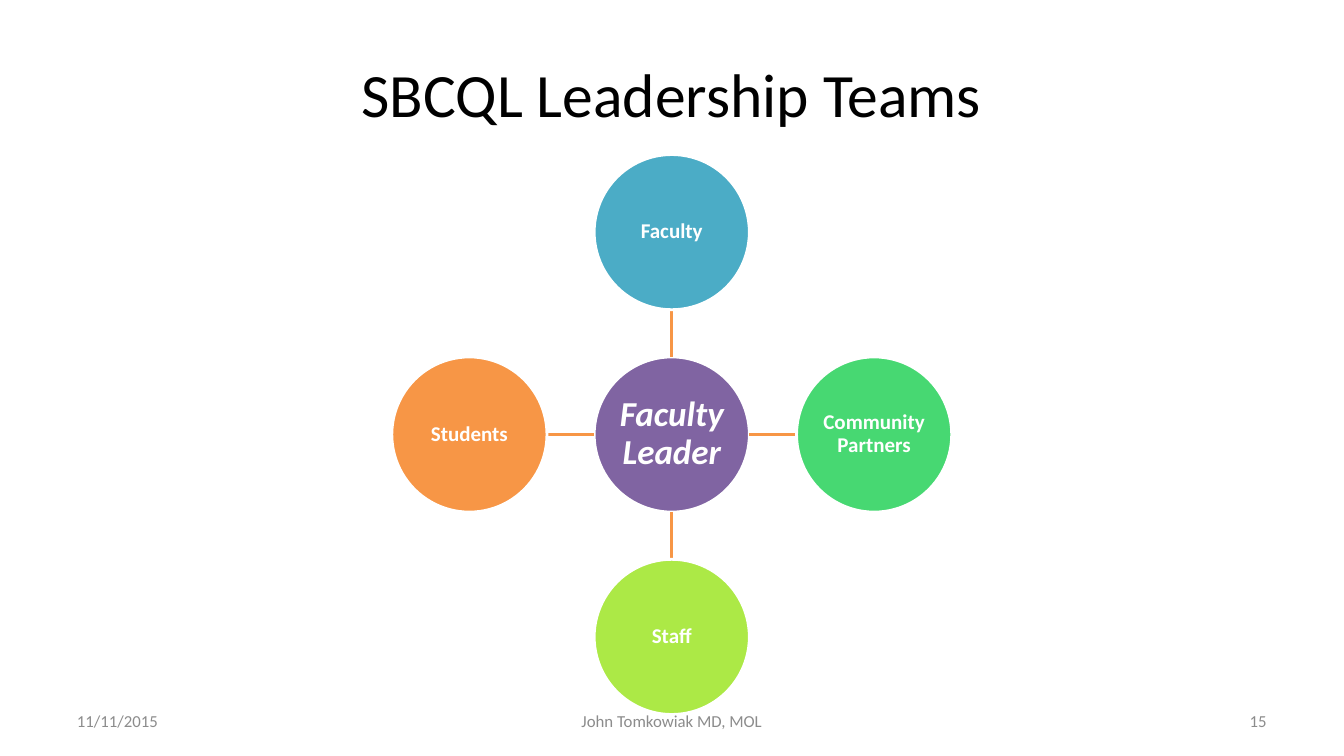
from dataclasses import dataclass

from lxml.etree import SubElement
from pptx import Presentation
from pptx.dml.color import RGBColor as Rgb
from pptx.enum.shapes import MSO_CONNECTOR as Connector, MSO_SHAPE as Preset
from pptx.enum.text import MSO_ANCHOR as Anchor, PP_ALIGN as Align
from pptx.oxml.ns import qn
from pptx.util import Cm, Pt


@dataclass(frozen=True)
class Theme:
    font: str = "Calibri"
    ink: str = "000000"
    muted: str = "8C8C8C"
    white: str = "FFFFFF"
    spoke: str = "F79646"
    leader: str = "8064A2"
    faculty: str = "4BACC6"
    partners: str = "47D872"
    staff: str = "ACE946"
    students: str = "F79646"
    title_size: float = 44
    leader_size: float = 25
    team_size: float = 15
    footer_size: float = 12
    line_width: float = 2


def write_text(frame, text, *, font, size, color, align=Align.CENTER,
               bold=False, italic=False, spacing=None, inset=None):
    frame.word_wrap = True
    frame.vertical_anchor = Anchor.MIDDLE
    if inset is not None:
        frame.margin_left = frame.margin_right = Cm(inset)
        frame.margin_top = frame.margin_bottom = Cm(inset)
    paragraph = frame.paragraphs[0]
    paragraph.alignment = align
    paragraph.line_spacing = spacing
    run = paragraph.add_run()
    run.text = text
    run.font.name = font
    run.font.size = Pt(size)
    run.font.bold = bold
    run.font.italic = italic
    run.font.color.rgb = Rgb.from_string(color)


class SlideBuilder:
    def __init__(self, slide, theme):
        self.slide = slide
        self.theme = theme

    def label(self, text, left, top, width, height, **style):
        box = self.slide.shapes.add_textbox(Cm(left), Cm(top), Cm(width), Cm(height))
        write_text(box.text_frame, text, font=self.theme.font, **style)

    def circle(self, text, center, diameter, fill, size, italic=False):
        left, top = (value - diameter / 2 for value in center)
        disc = self.slide.shapes.add_shape(
            Preset.OVAL, Cm(left), Cm(top), Cm(diameter), Cm(diameter))
        disc.shadow.inherit = False
        disc.fill.solid()
        disc.fill.fore_color.rgb = Rgb.from_string(fill)
        disc.line.color.rgb = Rgb.from_string(self.theme.white)
        disc.line.width = Pt(self.theme.line_width)
        write_text(disc.text_frame, text, font=self.theme.font, size=size,
                   color=self.theme.white, bold=True, italic=italic,
                   spacing=0.9, inset=0.03)

    def spoke(self, start, end):
        link = self.slide.shapes.add_connector(
            Connector.STRAIGHT, *(Cm(value) for value in (*start, *end)))
        link.line.color.rgb = Rgb.from_string(self.theme.spoke)
        link.line.width = Pt(self.theme.line_width)
        SubElement(link._element.spPr, qn("a:effectLst"))


def main():
    theme = Theme()
    deck = Presentation()
    deck.slide_width, deck.slide_height = Cm(33.87), Cm(19.05)
    builder = SlideBuilder(deck.slides.add_slide(deck.slide_layouts[6]), theme)

    builder.label("SBCQL Leadership Teams", 1.69, 0.76, 30.48, 3.18,
                  size=theme.title_size, color=theme.ink)

    hub_x, hub_y = 16.93, 10.95
    diameter, reach = 3.91, 5.1
    radius = diameter / 2
    teams = [
        ("Faculty", theme.faculty, 0, -1),
        ("Community Partners", theme.partners, 1, 0),
        ("Staff", theme.staff, 0, 1),
        ("Students", theme.students, -1, 0),
    ]

    builder.circle("Faculty Leader", (hub_x, hub_y), diameter, theme.leader,
                   theme.leader_size, italic=True)
    for team, fill, dx, dy in teams:
        inner, outer, center = (
            (hub_x + dx * distance, hub_y + dy * distance)
            for distance in (radius, reach - radius, reach))
        builder.spoke(inner, outer)
        builder.circle(team, center, diameter, fill, theme.team_size)

    footers = [
        ("11/11/2015", 1.69, 7.9, Align.LEFT),
        ("15", 24.27, 7.9, Align.RIGHT),
        ("John Tomkowiak MD, MOL", 11.57, 10.72, Align.CENTER),
    ]
    for text, left, width, align in footers:
        builder.label(text, left, 17.66, width, 1.01, align=align,
                      size=theme.footer_size, color=theme.muted)

    deck.save("out.pptx")


if __name__ == "__main__":
    main()
